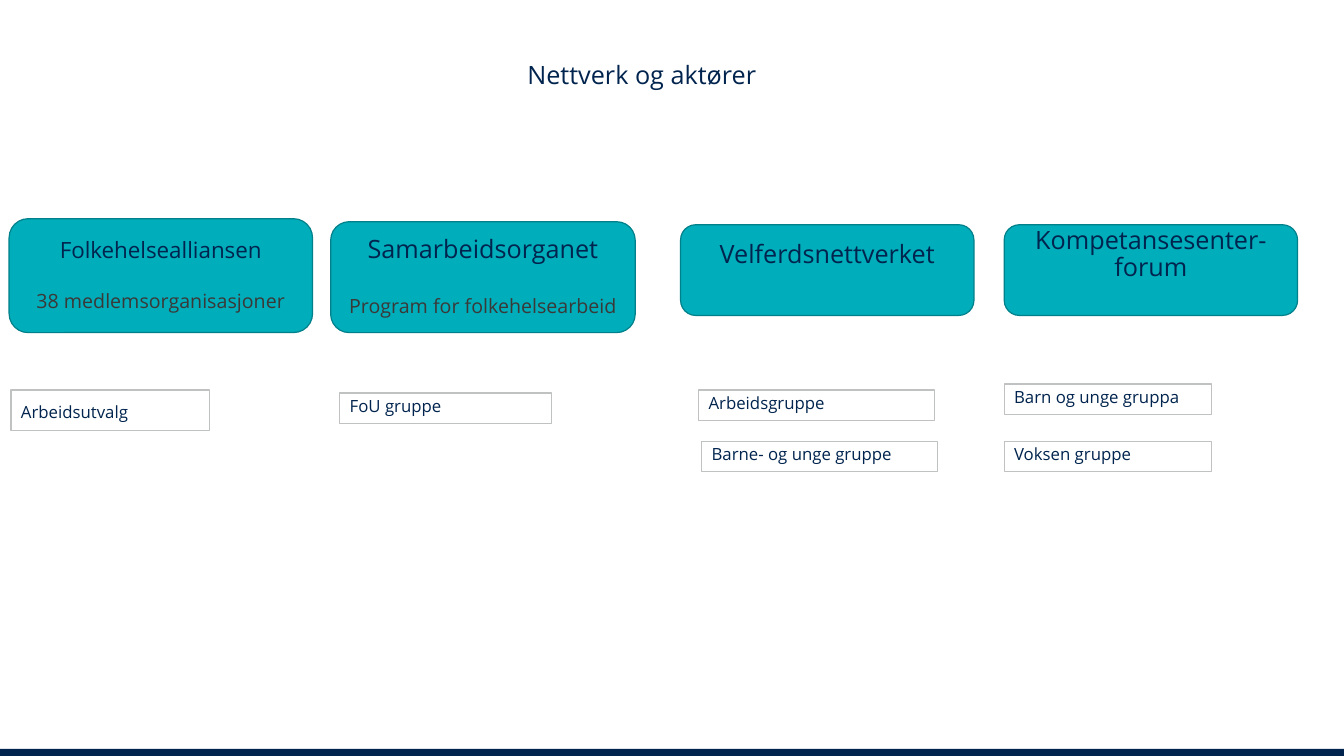
import pptx
import pptx.util
from pptx.dml.color import RGBColor
from pptx.enum.shapes import MSO_SHAPE
from pptx.enum.text import MSO_ANCHOR, MSO_AUTO_SIZE, PP_ALIGN

Inches = pptx.util.Inches
Pt = pptx.util.Pt

NAVY = RGBColor(0x00, 0x24, 0x4E)
TEAL = RGBColor(0x00, 0xAD, 0xBA)
DARK_TEAL = RGBColor(0x00, 0x80, 0x8A)
CHARCOAL = RGBColor(0x3B, 0x38, 0x38)
GREY = RGBColor(0xBF, 0xC2, 0xC0)
WHITE = RGBColor(0xFF, 0xFF, 0xFF)

TITLE = "Nettverk og aktører"
NETWORKS = [
    {"name": "Folkehelsealliansen", "size": 16, "gap": 20,
     "detail": "38 medlemsorganisasjoner", "at": (0.09, 2.17, 3.01, 1.13)},
    {"name": "Samarbeidsorganet", "size": 18, "gap": 23,
     "detail": "Program for folkehelsearbeid", "at": (3.28, 2.2, 3.02, 1.1)},
    {"name": "Velferdsnettverket", "size": 18, "at": (6.75, 2.23, 2.91, 0.9)},
    {"name": "Kompetansesenter- forum", "size": 18, "at": (9.96, 2.23, 2.91, 0.9)},
]
GROUPS = [
    ("Arbeidsutvalg", (0.11, 3.87, 1.97, 0.4), 0.14),
    ("FoU gruppe", (3.37, 3.9, 2.1, 0.3), 0.05),
    ("Arbeidsgruppe", (6.93, 3.87, 2.34, 0.3), 0.05),
    ("Barne- og unge gruppe", (6.96, 4.38, 2.34, 0.3), 0.05),
    ("Barn og unge gruppa", (9.96, 3.81, 2.06, 0.3), 0.05),
    ("Voksen gruppe", (9.96, 4.38, 2.06, 0.3), 0.05),
]


def write(para, text, size, color=NAVY, align=PP_ALIGN.LEFT, before=0):
    para.alignment = align
    para.line_spacing = 0.9
    para.space_before = Pt(before)
    span = para.add_run()
    span.text = text
    span.font.name = "Open Sans"
    span.font.size = Pt(size)
    span.font.color.rgb = color


def set_frame(shape, anchor, top=0.05, bottom=0.05):
    frame = shape.text_frame
    frame.word_wrap = True
    frame.auto_size = MSO_AUTO_SIZE.NONE
    frame.vertical_anchor = anchor
    frame.margin_left = frame.margin_right = Inches(0.1)
    frame.margin_top, frame.margin_bottom = Inches(top), Inches(bottom)
    return frame


def add_box(page, kind, at, fill, line=None):
    box = page.shapes.add_shape(kind, *map(Inches, at))
    box.shadow.inherit = False
    box.fill.solid()
    box.fill.fore_color.rgb = fill
    if line is None:
        box.line.fill.background()
    else:
        box.line.color.rgb = line
        box.line.width = Pt(0.85)
    return box


def add_network(page, network):
    box = add_box(page, MSO_SHAPE.ROUNDED_RECTANGLE, network["at"], TEAL, DARK_TEAL)
    detail = network.get("detail")
    frame = set_frame(box, MSO_ANCHOR.MIDDLE, bottom=0.05 if detail else 0.35)
    write(frame.paragraphs[0], network["name"], network["size"], align=PP_ALIGN.CENTER)
    if detail:
        write(frame.add_paragraph(), detail, 14, color=CHARCOAL,
              align=PP_ALIGN.CENTER, before=network["gap"])


def main():
    deck = pptx.Presentation()
    deck.slide_width, deck.slide_height = Inches(13.33), Inches(7.5)
    page = deck.slides.add_slide(deck.slide_layouts[5])

    title = page.shapes.title
    title.left, title.top, title.width, title.height = map(Inches, (5.13, 0.57, 3.24, 0.4))
    write(set_frame(title, MSO_ANCHOR.TOP).paragraphs[0], TITLE, 18)

    add_box(page, MSO_SHAPE.RECTANGLE, (0, 7.43, 13.33, 0.07), NAVY)
    for network in NETWORKS:
        add_network(page, network)
    for name, at, top in GROUPS:
        box = add_box(page, MSO_SHAPE.RECTANGLE, at, WHITE, GREY)
        write(set_frame(box, MSO_ANCHOR.TOP, top=top).paragraphs[0], name, 12)

    deck.save("out.pptx")


if __name__ == "__main__":
    main()
